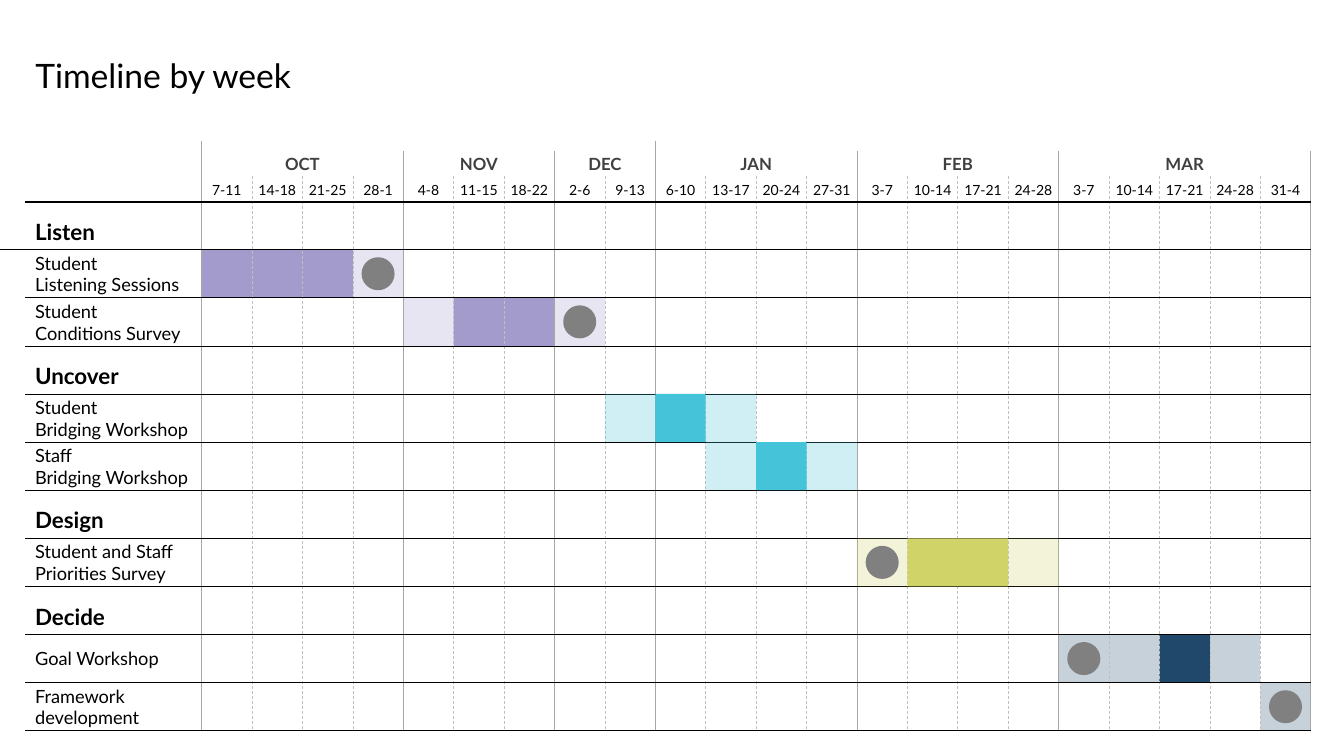
from lxml import etree
from pptx import Presentation
from pptx.dml.color import RGBColor
from pptx.enum import dml, shapes, text
from pptx.oxml.ns import qn
from pptx.util import Inches, Pt

TITLE = "Timeline by week"
MONTHS = [
    ("OCT", ["7-11", "14-18", "21-25", "28-1"]),
    ("NOV", ["4-8", "11-15", "18-22"]),
    ("DEC", ["2-6", "9-13"]),
    ("JAN", ["6-10", "13-17", "20-24", "27-31"]),
    ("FEB", ["3-7", "10-14", "17-21", "24-28"]),
    ("MAR", ["3-7", "10-14", "17-21", "24-28", "31-4"]),
]
# Phase, colour, bars in front of the grid lines, activities.
# Activity: label, bars (first week, weeks, pale), milestone week
PHASES = [
    ("Listen", "A29BCB", False, [
        ("Student\vListening Sessions", [(0, 3, False), (3, 1, True)], 3),
        ("Student\vConditions Survey",
         [(4, 1, True), (5, 2, False), (7, 1, True)], 7),
    ]),
    ("Uncover", "45C3D8", True, [
        ("Student\vBridging Workshop",
         [(8, 1, True), (9, 1, False), (10, 1, True)], None),
        ("Staff\vBridging Workshop",
         [(10, 1, True), (11, 1, False), (12, 1, True)], None),
    ]),
    ("Design", "CFD368", True, [
        ("Student and Staff Priorities Survey",
         [(13, 1, True), (14, 2, False), (16, 1, True)], 13),
    ]),
    ("Decide", "20486B", False, [
        ("Goal Workshop", [(17, 4, True), (19, 1, False)], 17),
        ("Framework development", [(21, 1, True)], 21),
    ]),
]
FONT, BLACK = "Lato", "000000"
MONTH_LINE, WEEK_LINE, MILESTONE = "A6A6A6", "BFBFBF", "808080"

# Grid in inches
LEFT, GRID_LEFT, WEEK = 0.25, 2, 0.5
MONTH_TOP, WEEK_TOP, TOP, BOTTOM = 1.5, 1.75, 2, 7.25
WEEKS = sum(len(weeks) for _, weeks in MONTHS)
ROWS = sum(1 + len(activities) for *_, activities in PHASES)
ROW = (BOTTOM - TOP) / ROWS
RIGHT = GRID_LEFT + WEEKS * WEEK
DOT = 0.23
TABLE_WEEKS = 4  # most weeks in one table


def colour(value):
    return RGBColor.from_string(value)


def week_x(week):
    return GRID_LEFT + week * WEEK


def row_y(row):
    return TOP + row * ROW


def inches(*lengths):
    return [Inches(length) for length in lengths]


def write(frame, words, size, ink=BLACK, bold=False, align=text.PP_ALIGN.LEFT):
    frame.text = words
    para = frame.paragraphs[0]
    para.alignment = align
    for span in para.runs:
        for name, value in dict(name=FONT, size=Pt(size), bold=bold).items():
            setattr(span.font, name, value)
        span.font.color.rgb = colour(ink)


def add_text(words, place, size, anchor=text.MSO_ANCHOR.MIDDLE, **style):
    frame = page.shapes.add_textbox(*inches(*place)).text_frame
    frame.word_wrap = True
    frame.vertical_anchor = anchor
    write(frame, words, size, **style)


def add_line(x1, y1, x2, y2, ink, width=0.5, dashed=False):
    line = page.shapes.add_connector(
        shapes.MSO_CONNECTOR.STRAIGHT, *inches(x1, y1, x2, y2))
    line.line.color.rgb = colour(ink)
    line.line.width = Pt(width)
    if dashed:
        line.line.dash_style = dml.MSO_LINE.DASH
    etree.SubElement(line._element.spPr, qn("a:effectLst"))


def add_solid(kind, place, ink):
    shape = page.shapes.add_shape(kind, *inches(*place))
    shape.shadow.inherit = False
    shape.fill.solid()
    shape.fill.fore_color.rgb = colour(ink)
    shape.line.fill.background()
    return shape


def add_bars(in_front):
    for row, ink, front, bars in activity_bars:
        if front != in_front:
            continue
        for week, count, pale in bars:
            bar = add_solid(shapes.MSO_SHAPE.RECTANGLE,
                            (week_x(week), row_y(row), count * WEEK, ROW), ink)
            if pale:
                tint = bar._element.spPr.find(".//" + qn("a:srgbClr"))
                etree.SubElement(tint, qn("a:alpha"), val="25000")


def add_weeks(weeks, left):
    table = page.shapes.add_table(1, len(weeks), *inches(
        left, WEEK_TOP, len(weeks) * WEEK, 0.27)).table
    table.first_row = table.horz_banding = False
    # Plain style without grid
    table._tbl.tblPr.find(qn("a:tableStyleId")).text = (
        "{2D5ABB26-0587-4C30-8999-92F81FD0307C}")
    for cell, week in zip(table.rows[0].cells, weeks):
        cell.fill.background()
        cell.margin_left = cell.margin_right = 0
        write(cell.text_frame, week, 10, align=text.PP_ALIGN.CENTER)


deck = Presentation()
deck.slide_width, deck.slide_height = inches(13.33, 7.5)
page = deck.slides.add_slide(deck.slide_layouts[5])

# Title
title = page.shapes.title
title.left, title.top, title.width, title.height = inches(LEFT, 0.5, 11.1, 0.48)
title.text_frame.auto_size = text.MSO_AUTO_SIZE.NONE
title.text_frame.vertical_anchor = text.MSO_ANCHOR.MIDDLE
title.text_frame.margin_top = title.text_frame.margin_bottom = Inches(0.04)
write(title.text_frame, TITLE, 24)

# Phase and activity labels
activity_bars, milestones = [], []
row = 0
for phase, ink, front, activities in PHASES:
    add_text(phase, (LEFT, row_y(row), GRID_LEFT - LEFT, ROW), 16,
             anchor=text.MSO_ANCHOR.BOTTOM, bold=True)
    row += 1
    for label, bars, milestone in activities:
        add_text(label, (LEFT, row_y(row), GRID_LEFT - LEFT, ROW), 13)
        activity_bars.append((row, ink, front, bars))
        if milestone is not None:
            milestones.append((row, milestone))
        row += 1

add_bars(in_front=False)

# Months, weeks and their vertical lines
first = 0
for month, weeks in MONTHS:
    left = week_x(first)
    add_text(month, (left, MONTH_TOP, len(weeks) * WEEK, 0.25), 12,
             ink="404040", bold=True, align=text.PP_ALIGN.CENTER)
    for start in range(0, len(weeks), TABLE_WEEKS):
        add_weeks(weeks[start:start + TABLE_WEEKS], week_x(first + start))
    line_top = MONTH_TOP - 0.1 if month in ("OCT", "JAN") else MONTH_TOP
    add_line(left, line_top, left, BOTTOM, MONTH_LINE)
    for week in range(first + 1, first + len(weeks)):
        add_line(week_x(week), WEEK_TOP, week_x(week), BOTTOM, WEEK_LINE,
                 dashed=True)
    first += len(weeks)
add_line(RIGHT, MONTH_TOP, RIGHT, BOTTOM, MONTH_LINE)

# Row lines: heavy under the header, to the slide's edge under the first phase
for row in range(ROWS + 1):
    add_line(0 if row == 1 else LEFT, row_y(row), RIGHT, row_y(row), BLACK,
             width=0.5 if row else 1.5)

add_bars(in_front=True)

# Milestones
for row, week in milestones:
    dot = add_solid(shapes.MSO_SHAPE.OVAL,
                    (week_x(week) + (WEEK - DOT) / 2,
                     row_y(row) + (ROW - DOT) / 2, DOT, DOT), MILESTONE)
    dot.line.color.rgb = colour(MILESTONE)
    dot.line.width = Pt(7)

deck.save("out.pptx")
